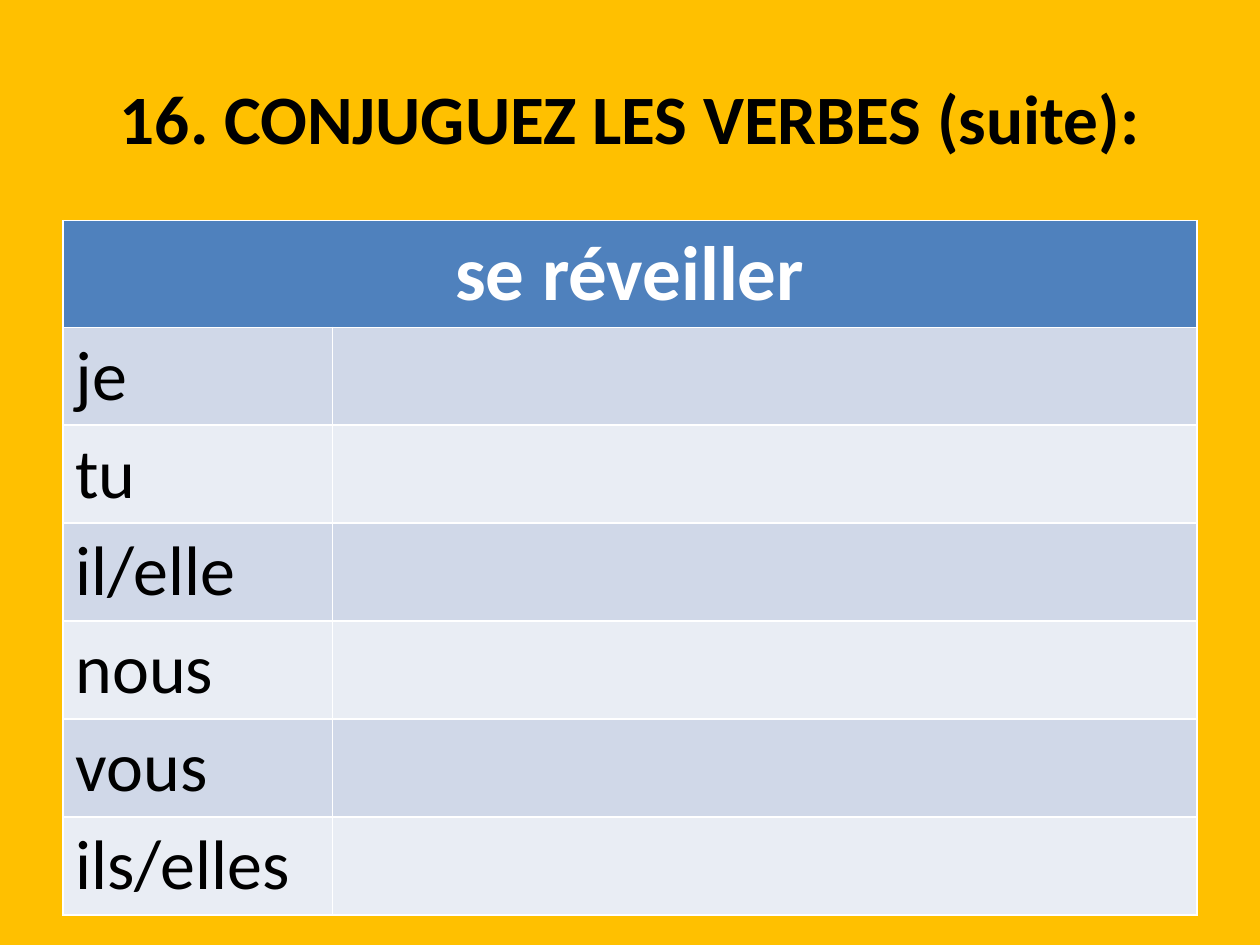
from pptx import Presentation
from pptx import util as u
from pptx.dml import color
from pptx.enum import text

PRONOUNS = ["je", "tu", "il/elle", "nous", "vous", "ils/elles"]
BANDS = ["D0D8E8", "E9EDF4"]


def paint(fill, value):
    fill.solid()
    fill.fore_color.rgb = color.RGBColor.from_string(value)


def write(shape, words, value, align, **formats):
    frame = shape.text_frame
    frame.text = words
    paragraph = frame.paragraphs[0]
    paragraph.alignment = align
    font = paragraph.runs[0].font
    paint(font.fill, value)
    for name, setting in {"name": "Calibri", **formats}.items():
        setattr(font, name, setting)


presentation = Presentation()
presentation.slide_width = u.Inches(10)
presentation.slide_height = u.Inches(7.5)
width, height = presentation.slide_width, presentation.slide_height
left, table_width = int(width * 0.05), int(width * 0.9)

slide = presentation.slides.add_slide(presentation.slide_layouts[5])
paint(slide.background.fill, "FFC000")

title = slide.shapes.title
title_box = {"left": left, "top": int(height * 0.04),
             "width": table_width, "height": int(height / 6)}
for name, setting in title_box.items():
    setattr(title, name, setting)
title.text_frame.vertical_anchor = text.MSO_ANCHOR.MIDDLE
write(title, "16. CONJUGUEZ LES VERBES (suite):", "000000",
      text.PP_ALIGN.CENTER, size=u.Pt(39.6), bold=True)

header_height, row_height = u.Inches(0.84), u.Inches(0.77)
table_height = header_height + row_height * len(PRONOUNS)
table = slide.shapes.add_table(len(PRONOUNS) + 1, 2, left, u.Inches(1.75),
                               table_width, table_height).table
table.columns[0].width = u.Inches(2.14)
table.columns[1].width = table_width - table.columns[0].width

table.rows[0].height = header_height
header = table.cell(0, 0)
header.merge(table.cell(0, 1))
paint(header.fill, "4F81BD")
write(header, "se réveiller", "FFFFFF", text.PP_ALIGN.CENTER,
      size=u.Pt(44), bold=True)

for row, pronoun in enumerate(PRONOUNS, start=1):
    table.rows[row].height = row_height
    for column in range(2):
        paint(table.cell(row, column).fill, BANDS[(row - 1) % 2])
    write(table.cell(row, 0), pronoun, "000000", text.PP_ALIGN.LEFT,
          size=u.Pt(40), bold=False)

presentation.save("out.pptx")
